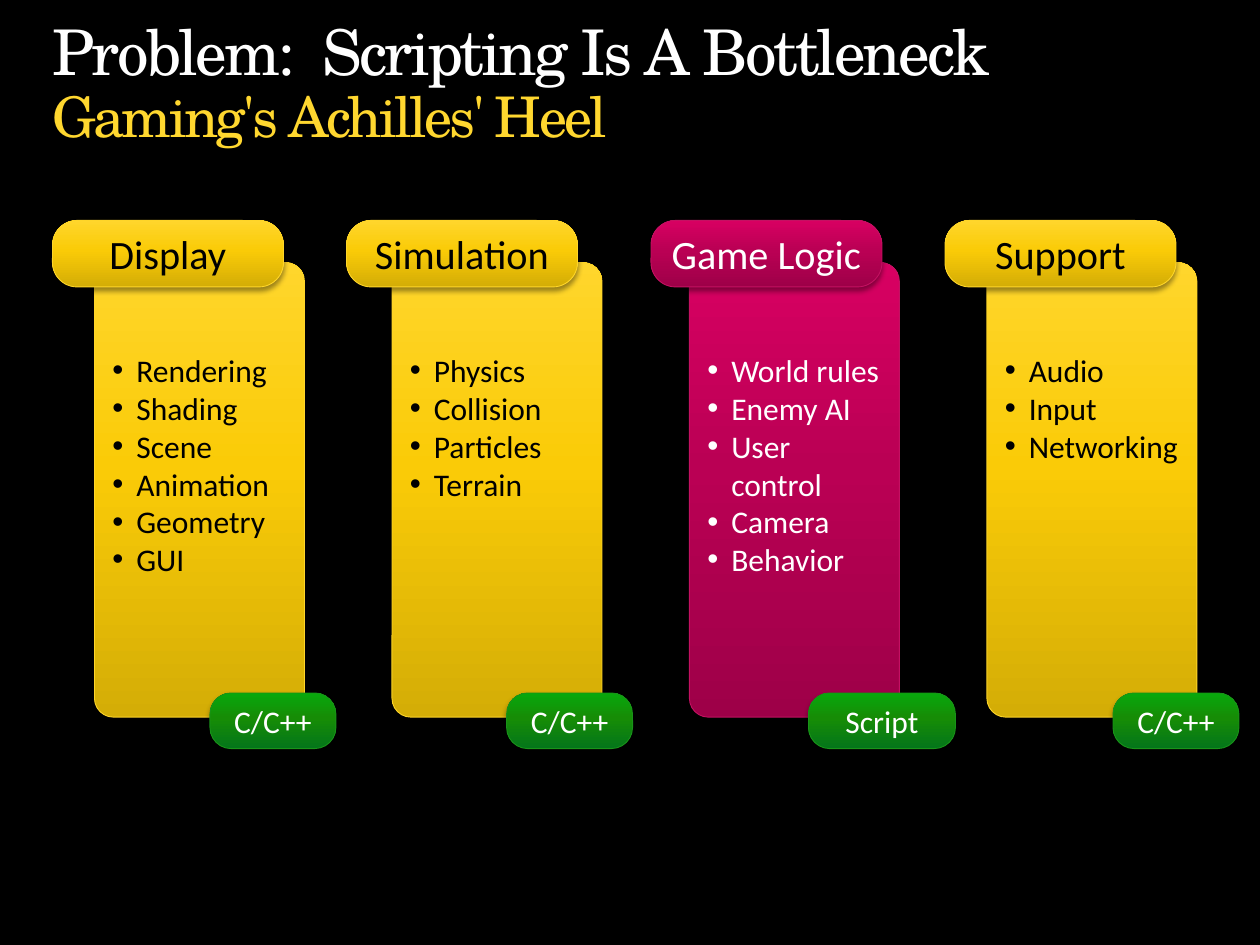
from copy import deepcopy

from lxml import etree
from pptx import Presentation
from pptx import util as u
from pptx.dml.color import RGBColor
from pptx.enum import shapes, text
from pptx.oxml import ns, parse_xml

COLUMNS, ROWS = 120, 90  # grid of 1/12 inch cells
PITCH = 28.33
YELLOW = (["D4AD06", "FACB07", "FFD62C"], "FED529", "000000")
MAGENTA = (["9E0048", "BA0054", "D80062"], "C41162", "FFFFFF")
GREEN = (["04761A", "168C06", "08A80C"], "199319", "FFFFFF")

# header, header left, style, items, tag, tag left, tag width
PILLARS = [
    ("Display", 5, YELLOW,
     ["Rendering", "Shading", "Scene", "Animation", "Geometry", "GUI"],
     "C/C++", 20, 12),
    ("Simulation", 33, YELLOW,
     ["Physics", "Collision", "Particles", "Terrain"], "C/C++", 48.25, 12),
    ("Game Logic", 62, MAGENTA,
     ["World rules", "Enemy AI", "User control", "Camera", "Behavior"],
     "Script", 77, 14),
    ("Support", 90, YELLOW, ["Audio", "Input", "Networking"],
     "C/C++", 106, 12),
]

presentation = Presentation()
presentation.slide_width, presentation.slide_height = u.Inches(10), u.Inches(7.5)
CELL_WIDTH = presentation.slide_width / COLUMNS
CELL_HEIGHT = presentation.slide_height / ROWS


def color(value):
    return RGBColor.from_string(value)


def grid(left, top, width, height):
    return (round(left * CELL_WIDTH), round(top * CELL_HEIGHT),
            round(width * CELL_WIDTH), round(height * CELL_HEIGHT))


def add_run(paragraph, words, size, hue, font="Calibri"):
    run = paragraph.add_run()
    run.text = words
    run.font.size = u.Pt(size)
    run.font.name = font
    run.font.color.rgb = color(hue)
    return run


def paint(shape, hues, line):
    """Vertical three-stop gradient, thin outline and soft shadow below."""
    shape.fill.gradient()
    shape.fill.gradient_angle = 90
    stops = shape.fill.gradient_stops
    stop_list = shape._element.spPr.find(".//" + ns.qn("a:gsLst"))
    stop_list.insert(1, deepcopy(stop_list[0]))
    for stop, hue, position in zip(stops, hues, (0, 0.55, 1)):
        stop.color.rgb = color(hue)
        stop.position = position
    shape.line.color.rgb = color(line)
    shape.line.width = u.Pt(0.5)
    shape.shadow.inherit = False
    effects = shape._element.spPr.find(ns.qn("a:effectLst"))
    effects.append(parse_xml(
        f'<a:outerShdw {ns.nsdecls("a")} blurRad="{u.Pt(3.1)}" dist="{u.Pt(2)}" '
        'dir="5400000" rotWithShape="0"><a:srgbClr val="000000">'
        '<a:alpha val="38000"/></a:srgbClr></a:outerShdw>'))


def add_card(parent, box, rounding, style):
    hues, line, _ = style
    shape = parent.add_shape(shapes.MSO_SHAPE.ROUNDED_RECTANGLE, *grid(*box))
    shape.adjustments[0] = rounding
    paint(shape, hues, line)
    shape.text_frame.word_wrap = True
    return shape


def add_label(parent, box, rounding, style, words, size):
    frame = add_card(parent, box, rounding, style).text_frame
    frame.vertical_anchor = text.MSO_ANCHOR.MIDDLE
    paragraph = frame.paragraphs[0]
    paragraph.alignment = text.PP_ALIGN.CENTER
    add_run(paragraph, words, size, style[2])


def add_list(parent, box, style, items):
    frame = add_card(parent, box, 0.09, style).text_frame
    frame.vertical_anchor = text.MSO_ANCHOR.TOP
    frame.margin_top = u.Inches(0.66)
    for index, item in enumerate(items):
        paragraph = frame.add_paragraph() if index else frame.paragraphs[0]
        paragraph.alignment = text.PP_ALIGN.LEFT
        properties = paragraph._p.get_or_add_pPr()
        properties.set("marL", str(u.Inches(0.19)))
        properties.set("indent", str(-u.Inches(0.19)))
        etree.SubElement(properties, ns.qn("a:buFont")).set("typeface", "Arial")
        etree.SubElement(properties, ns.qn("a:buChar")).set("char", "•")
        add_run(paragraph, item, 18, style[2])


def add_title(slide, box):
    title = slide.shapes.title
    title.left, title.top, title.width, title.height = grid(*box)
    frame = title.text_frame
    frame.margin_left = frame.margin_right = 0
    frame.margin_top = frame.margin_bottom = 0
    frame.word_wrap = True
    frame.auto_size = text.MSO_AUTO_SIZE.NONE
    frame.vertical_anchor = text.MSO_ANCHOR.TOP
    paragraph = frame.paragraphs[0]
    paragraph.alignment = text.PP_ALIGN.LEFT
    paragraph.line_spacing = 0.9
    font = "TeX Gyre Schola"
    first = add_run(paragraph, "Problem:  Scripting Is A Bottleneck", 36, "FFFFFF", font)
    paragraph.add_line_break()
    second = add_run(paragraph, "Gaming's Achilles' Heel", 32, "FFD72F", font)
    for run in (first, second):
        run._r.get_or_add_rPr().set("spc", "-150")
    line_break = paragraph._p.find(ns.qn("a:br"))
    line_break.insert(0, deepcopy(first._r.rPr))


def add_pillar(slide, body_left, header, header_left, style, items):
    group = slide.shapes.add_group_shape().shapes
    add_list(group, (body_left, 25, 20, 43.3), style, items)
    add_label(group, (header_left, 21, 22, 6.33), 0.37, style, header, 23)


def main():
    slide = presentation.slides.add_slide(presentation.slide_layouts[5])
    slide.background.fill.solid()
    slide.background.fill.fore_color.rgb = color("000000")
    add_title(slide, (5, 2, 110, 12.4))
    for index, (header, header_left, style, items, *_) in enumerate(PILLARS):
        add_pillar(slide, 9 + PITCH * index, header, header_left, style, items)
    for *_, tag, left, width in PILLARS:
        add_label(slide.shapes, (left, 66, width, 5.3), 0.38, GREEN, tag, 18)
    presentation.save("out.pptx")


if __name__ == "__main__":
    main()
